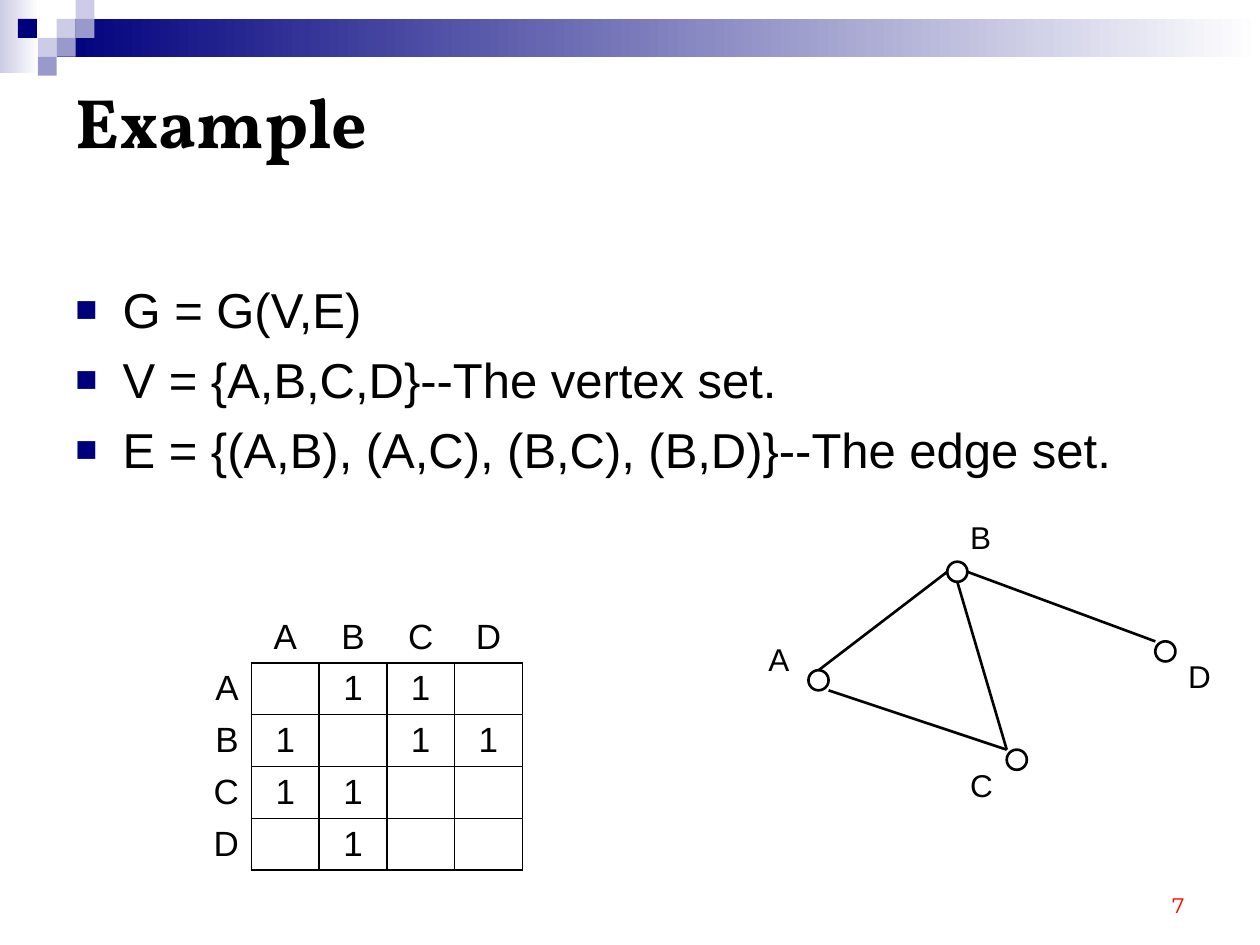
from dataclasses import dataclass

from lxml.etree import SubElement
from pptx import Presentation
from pptx.dml.color import RGBColor as RGB
from pptx.enum.shapes import MSO_CONNECTOR as Connector, MSO_SHAPE as Shape
from pptx.enum.text import MSO_ANCHOR as Anchor, MSO_AUTO_SIZE as AutoSize, PP_ALIGN as Align
from pptx.oxml.ns import qn
from pptx.util import Pt


@dataclass(frozen=True)
class Theme:
    ink: str = "000000"
    navy: str = "00007D"
    mid: str = "9999CC"
    pale: str = "CCCCE6"
    white: str = "FFFFFF"
    red: str = "FF0000"
    body_font: str = "Arial"
    title_font: str = "Vollkorn"
    number_font: str = "Montserrat"
    title: int = 40
    body: int = 28
    cell: int = 20
    label: int = 18
    number: int = 12
    stroke: float = 1.5
    border: float = 1


class PageBuilder:
    def __init__(self, page, theme):
        self.page, self.theme = page, theme

    def style(self, para, size, font=None, color=None, bold=False, align=Align.LEFT):
        para.alignment = align
        para.font.size = Pt(size)
        para.font.name = font or self.theme.body_font
        para.font.bold = bold
        para.font.color.rgb = RGB.from_string(color or self.theme.ink)

    def text(self, box, lines, size, anchor=Anchor.TOP, wrap=True, **look):
        frame = self.page.shapes.add_textbox(*map(Pt, box)).text_frame
        frame.word_wrap = wrap
        frame.auto_size = AutoSize.NONE if wrap else AutoSize.SHAPE_TO_FIT_TEXT
        frame.vertical_anchor = anchor
        frame.text = "\n".join(lines)
        for para in frame.paragraphs:
            self.style(para, size, **look)
        return frame

    def bullets(self, box, lines, indent=27):
        for para in self.text(box, lines, self.theme.body).paragraphs:
            para.space_before = Pt(6.4)
            props = para._p.get_or_add_pPr()
            props.set("marL", str(Pt(indent)))
            props.set("indent", str(-Pt(indent)))
            marks = [
                SubElement(props, qn("a:buClr")),
                SubElement(props, qn("a:buSzPct"), val="75000"),
                SubElement(props, qn("a:buFont"), typeface=self.theme.body_font),
                SubElement(props, qn("a:buChar"), char="■"),
            ]
            SubElement(marks[0], qn("a:srgbClr"), val=self.theme.navy)
            # The schema wants the default run properties after the bullet
            props.append(props.find(qn("a:defRPr")))

    def block(self, box, *colors):
        """A borderless rectangle: one colour is solid, two make a gradient."""
        block = self.page.shapes.add_shape(Shape.RECTANGLE, *map(Pt, box))
        block.shadow.inherit = False
        block.line.fill.background()
        if len(colors) == 1:
            block.fill.solid()
            block.fill.fore_color.rgb = RGB.from_string(colors[0])
            return
        block.fill.gradient()
        block.fill.gradient_angle = 0
        for stop, color in zip(block.fill.gradient_stops, colors):
            stop.color.rgb = RGB.from_string(color)

    def ring(self, left, top, size):
        ring = self.page.shapes.add_shape(Shape.OVAL, *map(Pt, (left, top, size, size)))
        ring.shadow.inherit = False
        ring.fill.background()
        ring.line.width = Pt(self.theme.stroke)
        ring.line.color.rgb = RGB.from_string(self.theme.ink)

    def line(self, start, end):
        line = self.page.shapes.add_connector(Connector.STRAIGHT, *map(Pt, (*start, *end)))
        line.line.width = Pt(self.theme.stroke)
        line.line.color.rgb = RGB.from_string(self.theme.ink)
        SubElement(line._element.spPr, qn("a:effectLst"))

    def borders(self, cell, sides):
        props = cell._tc.get_or_add_tcPr()
        for side, drawn in sides.items():
            edge = SubElement(props, qn(f"a:ln{side}"), w=str(Pt(self.theme.border)))
            if drawn:
                fill = SubElement(edge, qn("a:solidFill"))
                SubElement(fill, qn("a:srgbClr"), val=self.theme.ink)
            else:
                SubElement(edge, qn("a:noFill"))

    def matrix(self, left, top, width, height, names, edges):
        """An adjacency matrix whose header row and column stand outside the grid."""
        count = len(names) + 1
        box = (left, top, width * count, height * count)
        table = self.page.shapes.add_table(count, count, *map(Pt, box)).table
        table.first_row = table.horz_banding = False
        for column in table.columns:
            column.width = Pt(width)
        for row in table.rows:
            row.height = Pt(height)
        linked = {*edges, *(edge[::-1] for edge in edges)}
        heads = ["", *names]
        for r, row_name in enumerate(heads):
            for c, column_name in enumerate(heads):
                cell = table.cell(r, c)
                inside = r > 0 and c > 0
                self.borders(cell, {"L": inside, "R": r > 0, "T": inside, "B": c > 0})
                cell.fill.background()
                cell.margin_top = cell.margin_bottom = Pt(2)
                cell.vertical_anchor = Anchor.MIDDLE
                if inside:
                    cell.text = "1" if row_name + column_name in linked else ""
                else:
                    cell.text = row_name or column_name
                self.style(cell.text_frame.paragraphs[0], self.theme.cell,
                           align=Align.CENTER if c else Align.RIGHT)


def main():
    deck = Presentation()
    deck.slide_width, deck.slide_height = Pt(720), Pt(540)
    theme = Theme()
    page = PageBuilder(deck.slides.add_slide(deck.slide_layouts[6]), theme)

    # Banner: two gradients and a mosaic of small squares
    tile = 10.8
    page.block((0, 0, 22.3, 41.8), theme.pale, theme.white)
    page.block((3 * tile, tile, 720 - 3 * tile, 2 * tile), theme.navy, theme.white)
    mosaic = [(3, 1, theme.pale), (4, 0, theme.pale), (4, 1, theme.mid), (2, 2, theme.pale),
              (0.95, 1, theme.navy), (3, 2, theme.mid), (2, 3, theme.mid)]
    for column, row, color in mosaic:
        page.block((column * tile, row * tile, tile, tile), color)

    # Title, definitions and page number
    page.text((36, 30.2, 648, 77.8), ["Example"], theme.title, Anchor.MIDDLE,
              font=theme.title_font, bold=True)
    page.bullets((36, 156.2, 630, 154), [
        "G = G(V,E)",
        "V = {A,B,C,D}--The vertex set.",
        "E = {(A,B), (A,C), (B,C), (B,D)}--The edge set.",
    ])
    page.text((516, 492, 168, 36), ["7"], theme.number, Anchor.BOTTOM,
              font=theme.number_font, color=theme.red, align=Align.RIGHT)

    # Adjacency matrix
    page.matrix(105, 349.2, 38.7, 29.6, "ABCD", ["AB", "AC", "BC", "BD"])

    # Graph: vertices, edges and labels
    size = 11.5
    vertices = {"A": (462, 383), "B": (541.3, 321), "C": (575.3, 428.4), "D": (660.2, 366.5)}
    for left, top in vertices.values():
        page.ring(left, top, size)

    def spot(name, across, down):
        left, top = vertices[name]
        return left + across * size, top + down * size

    page.line(spot("A", 1, 1), spot("C", 0, 0))
    page.line(spot("C", 0, 0), spot("B", 0.5, 1))
    page.line(spot("B", 1, 0.5), spot("D", 0, 0))
    page.line(spot("A", 0.5, 0), spot("B", 0, 0.5))

    labels = {"A": (432, 362.2), "B": (547.2, 292.3), "C": (547.2, 434.2), "D": (671.8, 372.2)}
    for name, (left, top) in labels.items():
        page.text((left, top, 27, 28.8), [name], theme.label, wrap=False)

    deck.save("out.pptx")


if __name__ == "__main__":
    main()
